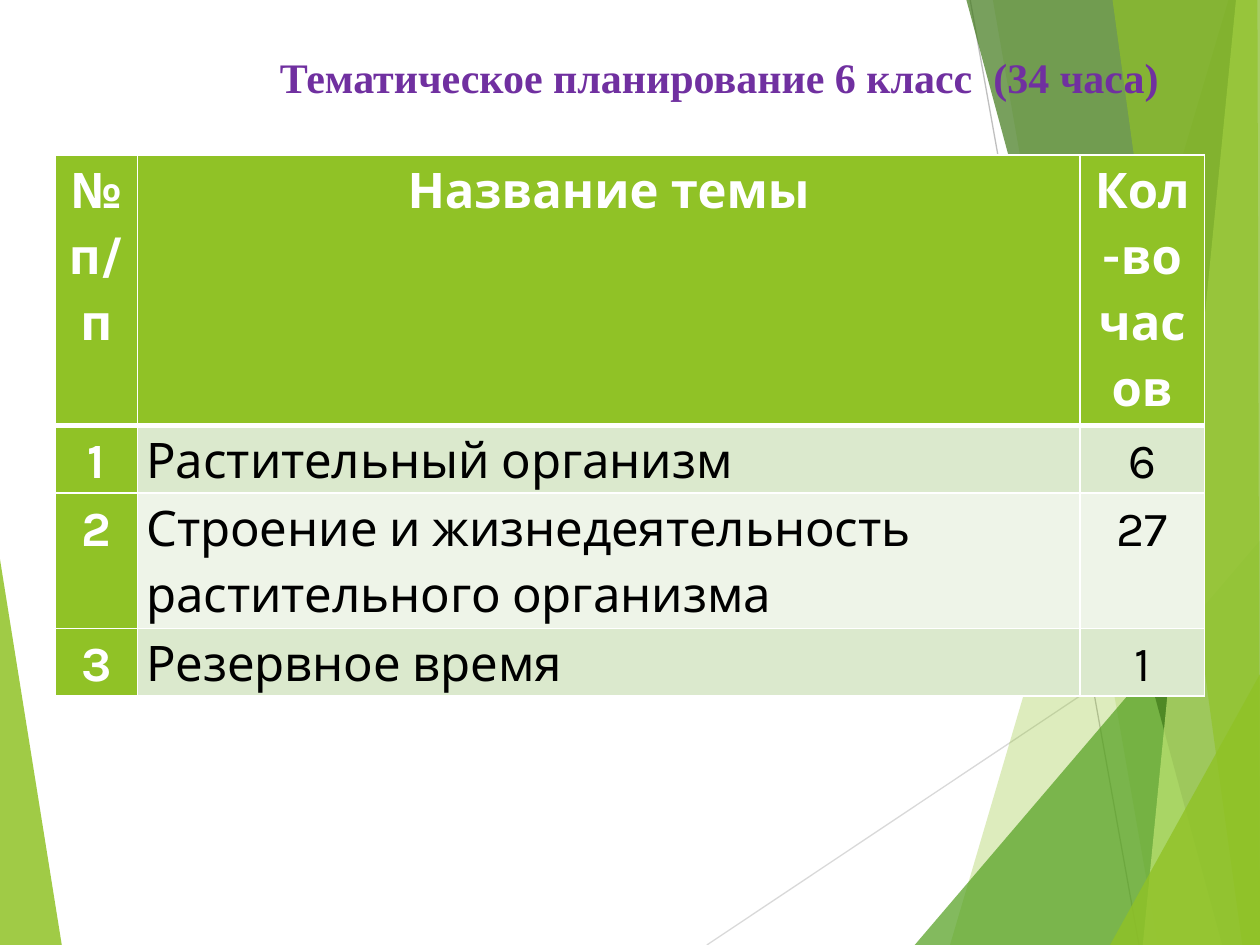
"""Build the thematic planning slide for grade 6: a title and a table of topics."""
from lxml import etree
from pptx import Presentation
from pptx.dml.color import RGBColor
from pptx.enum.shapes import MSO_CONNECTOR
from pptx.enum.text import MSO_ANCHOR, MSO_AUTO_SIZE, PP_ALIGN
from pptx.oxml.ns import qn
from pptx.util import Inches, Pt

LEFT, CENTER = PP_ALIGN.LEFT, PP_ALIGN.CENTER
STRAIGHT = MSO_CONNECTOR.STRAIGHT
MIDDLE, TOP = MSO_ANCHOR.MIDDLE, MSO_ANCHOR.TOP
FIT_SHAPE = MSO_AUTO_SIZE.SHAPE_TO_FIT_TEXT

WHITE = RGBColor(0xFF, 0xFF, 0xFF)
BLACK = RGBColor(0x00, 0x00, 0x00)
PURPLE = RGBColor(0x70, 0x30, 0xA0)
LIME = RGBColor(0x90, 0xC2, 0x26)
GREEN = RGBColor(0x54, 0xA0, 0x21)
DARK_GREEN = RGBColor(0x3F, 0x78, 0x19)
PALE_LIME = RGBColor(0xC0, 0xE4, 0x74)
BAND_DARK = RGBColor(0xDB, 0xE9, 0xCD)
BAND_LIGHT = RGBColor(0xEE, 0xF4, 0xE8)
LIGHT_GRAY = RGBColor(0xD9, 0xD9, 0xD9)
GRAY = RGBColor(0xBF, 0xBF, 0xBF)


def write_text(frame, text, font="Karla", size=28, color=BLACK, bold=False,
               align=CENTER, spacing=1.15):
    paragraph = frame.paragraphs[0]
    paragraph.alignment = align
    paragraph.line_spacing = spacing
    run = paragraph.add_run()
    run.text = text
    run.font.name = font
    run.font.size = Pt(size)
    run.font.bold = bold
    run.font.color.rgb = color


def add_border(cell, side, width):
    line = etree.SubElement(cell._tc.get_or_add_tcPr(), qn(f"a:ln{side}"), w=str(Pt(width)))
    fill = etree.SubElement(line, qn("a:solidFill"))
    etree.SubElement(fill, qn("a:srgbClr"), val=str(WHITE))


prs = Presentation()
prs.slide_width, prs.slide_height = Inches(10), Inches(7.5)
slide = prs.slides.add_slide(prs.slide_layouts[5])
shapes = slide.shapes

rays = [
    ((5.61, 7.5), (10, 4.57), LIGHT_GRAY),
    ((7.7, 0), (9.04, 7.5), GRAY),
]
for start, end, color in rays:
    ray = shapes.add_connector(STRAIGHT, *map(Inches, start + end))
    ray.line.color.rgb = color
    ray.line.width = Pt(0.75)
    etree.SubElement(ray.element.spPr, qn("a:effectLst"))

facets = [
    ([(0, 4.44), (0.49, 7.5), (0, 7.5)], LIME, 85),
    ([(9.75, 0), (7.54, 7.5), (10, 7.5), (10, 0)], LIME, 30),
    ([(7.88, 0), (9.19, 7.5), (10, 7.5), (10, 0)], LIME, 20),
    ([(7.26, 7.5), (10, 4.29), (10, 7.5)], GREEN, 72),
    ([(7.67, 0), (9.7, 7.5), (10, 7.5), (10, 0)], DARK_GREEN, 70),
    ([(9.81, 0), (9.07, 7.5), (10, 7.5), (10, 0)], PALE_LIME, 70),
    ([(8.83, 0), (9.86, 7.5), (10, 7.5), (9.98, 0)], LIME, 65),
    ([(8.81, 7.5), (10, 5.35), (10, 7.5)], LIME, 80),
]
for corners, color, opacity in facets:
    points = [(Inches(x), Inches(y)) for x, y in corners]
    outline = shapes.build_freeform(*points[0])
    outline.add_line_segments(points[1:])
    facet = outline.convert_to_shape()
    facet.shadow.inherit = False
    facet.line.fill.background()
    facet.fill.solid()
    facet.fill.fore_color.rgb = color
    tint = facet.element.spPr.find(f"{qn('a:solidFill')}/{qn('a:srgbClr')}")
    etree.SubElement(tint, qn("a:alpha"), val=str(opacity * 1000))

title = shapes.title
title.left, title.top, title.width, title.height = map(Inches, (2.01, 0.36, 7.4, 0.5))
title.text_frame.word_wrap = True
title.text_frame.auto_size = FIT_SHAPE
title.text_frame.vertical_anchor = MIDDLE
write_text(title.text_frame, "Тематическое планирование 6 класс  (34 часа)",
           font="Times New Roman", size=24, color=PURPLE, bold=True, spacing=1.0)
title.element.getparent().append(title.element)

topics = [
    ("№ п/п", "Название темы", "Кол-во часов"),
    ("1", "Растительный организм", "6"),
    ("2", "Строение и жизнедеятельность растительного организма", "27"),
    ("3", "Резервное время", "1"),
]
column_widths = [0.65, 7.48, 0.99]
row_heights = [2.14, 0.53, 1.07, 0.53]
plan = shapes.add_table(len(topics), len(column_widths), Inches(0.44), Inches(1.23),
                        Inches(sum(column_widths)), Inches(sum(row_heights))).table
for column, width in zip(plan.columns, column_widths):
    column.width = Inches(width)
for row, height in zip(plan.rows, row_heights):
    row.height = Inches(height)

for r, topic in enumerate(topics):
    for c, text in enumerate(topic):
        cell = plan.cell(r, c)
        heading = r == 0 or c == 0
        cell.margin_left = cell.margin_right = Inches(0.07)
        cell.margin_top = cell.margin_bottom = 0
        cell.vertical_anchor = TOP
        write_text(cell.text_frame, text, bold=heading,
                   color=WHITE if heading else BLACK,
                   align=LEFT if r and c == 1 else CENTER)
        for side in "LRTB":
            under_header = (r, side) in ((0, "B"), (1, "T"))
            add_border(cell, side, 3 if under_header else 1)
        cell.fill.solid()
        band = BAND_DARK if r % 2 else BAND_LIGHT
        cell.fill.fore_color.rgb = LIME if heading else band

prs.save("out.pptx")
